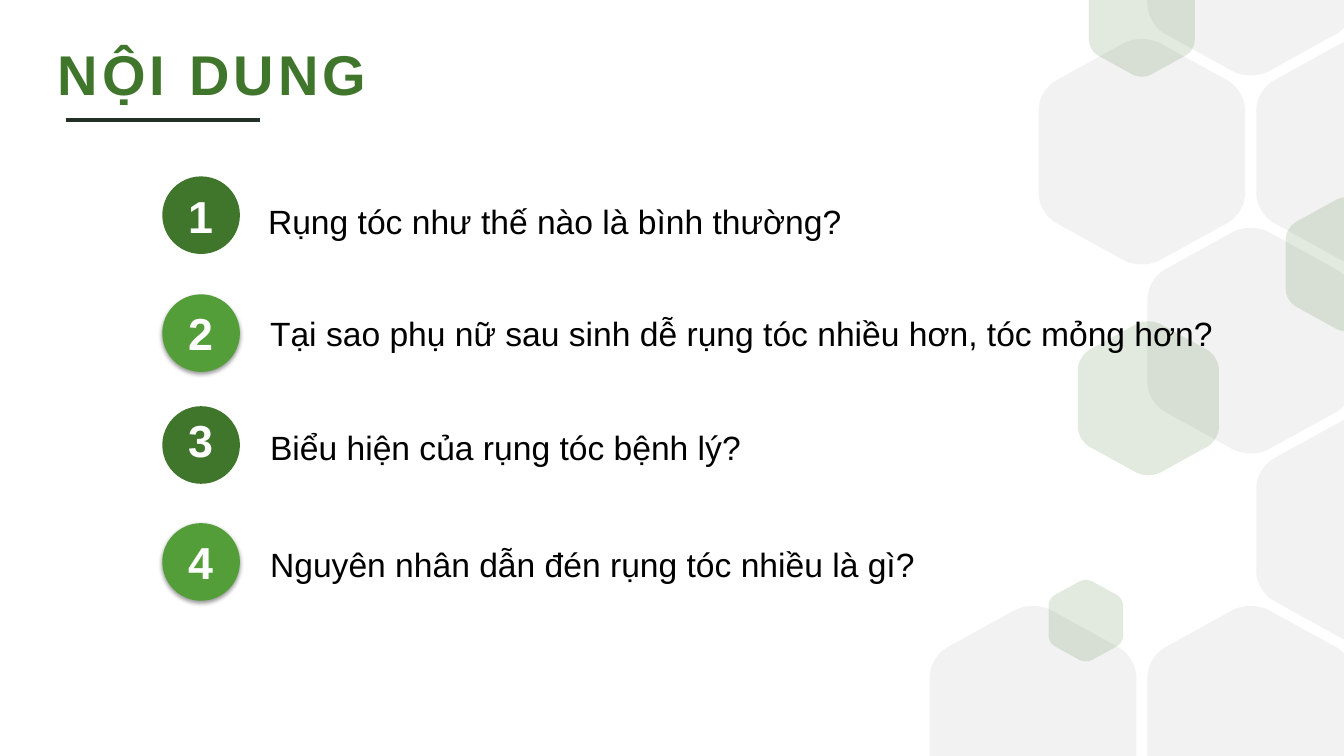
from lxml.etree import SubElement
from pptx import Presentation
from pptx.dml.color import RGBColor
from pptx.enum.shapes import MSO_CONNECTOR, MSO_SHAPE
from pptx.enum.text import MSO_AUTO_SIZE
from pptx.oxml.ns import qn
from pptx.util import Inches, Pt
from pptx.enum.text import MSO_ANCHOR, PP_ALIGN

DARK_GREEN = RGBColor(0x3F, 0x76, 0x2B)
GREEN = RGBColor(0x54, 0x9E, 0x39)
INK = RGBColor(0x22, 0x30, 0x28)
PALE_GREY = RGBColor(0xF2, 0xF2, 0xF2)
WHITE = RGBColor(0xFF, 0xFF, 0xFF)
BLACK = RGBColor(0, 0, 0)

SLIDE_W, SLIDE_H = 13.33, 7.5
HEADING = "NỘI DUNG"
TOPICS = [
    {"topic": "Rụng tóc như thế nào là bình thường?",
     "badge_top": 1.75, "number_top": 1.82, "left": 2.56, "top": 1.94},
    {"topic": "Tại sao phụ nữ sau sinh dễ rụng tóc nhiều hơn, tóc mỏng hơn?",
     "badge_top": 2.92, "number_top": 2.98, "top": 3.06, "width": 9.78},
    {"topic": "Biểu hiện của rụng tóc bệnh lý?",
     "badge_top": 4.03, "number_top": 4.05, "top": 4.19},
    {"topic": "Nguyên nhân dẫn đén rụng tóc nhiều là gì?",
     "badge_top": 5.19, "number_top": 5.26, "top": 5.23,
     "height": 0.57, "line_spacing": 1.3},
]
BADGE_LEFT, BADGE_SIZE = 1.61, 0.77
NUMBER_LEFT, NUMBER_W, NUMBER_H = 1.77, 0.55, 0.64

COMB_LEFT, COMB_TOP = 9.22, -1.5
COLUMN_STEP, ROW_STEP = 1.08, SLIDE_H / 4
CELL_W, CELL_H = 2.05, 2.26
COMB_CELLS = [(0, 4), (2, 4), (3, 1), (2, 0), (2, 2), (1, 1), (3, 3)]
GREEN_CELLS = [(12.75, 1.95, 1.22), (10.4, 5.75, 0.74),
               (10.8, -0.39, 1.05), (10.69, 3.18, 1.4)]

SIDE_CORNER = [(1, 0.32), (1, 0.27), (0.97, 0.22), (0.92, 0.19)]
TIP_CORNER = [(0.58, 0.02), (0.53, 0), (0.47, 0), (0.42, 0.02)]
UPPER_HALF = SIDE_CORNER + TIP_CORNER + [(1 - x, y) for x, y in reversed(SIDE_CORNER)]
LOWER_HALF = [(1 - x, 1 - y) for x, y in UPPER_HALF]


def hexagon_outline(top, height):
    if top < 0:
        edge = -top / height
        return [(0, edge), *LOWER_HALF, (1, edge)]
    if top + height > SLIDE_H:
        edge = (SLIDE_H - top) / height
        return [(1, edge), *UPPER_HALF, (0, edge)]
    return [LOWER_HALF[-1], *UPPER_HALF, *LOWER_HALF]


def round_corners(cell):
    lines = list(cell._element.iter(qn("a:lnTo")))
    for first in range(0, len(lines) - 3, 4):
        bend, *rest = lines[first + 1:first + 4]
        bend.tag = qn("a:cubicBezTo")
        for line in rest:
            bend.append(line[0])
            line.getparent().remove(line)


def add_hexagon(slide, left, top, width, color, opacity=None):
    height = width * CELL_H / CELL_W
    points = [(Inches(left + x * width), Inches(top + y * height))
              for x, y in hexagon_outline(top, height)]
    builder = slide.shapes.build_freeform(*points[0])
    builder.add_line_segments(points[1:], close=True)
    cell = builder.convert_to_shape()
    round_corners(cell)
    paint(cell, color)
    if opacity:
        tint = cell.fill._xPr.find(qn("a:solidFill"))[0]
        SubElement(tint, qn("a:alpha"), val=str(opacity * 1000))


def paint(shape, color):
    shape.shadow.inherit = False
    shape.fill.solid()
    shape.fill.fore_color.rgb = color
    shape.line.fill.background()


def add_soft_shadow(shape):
    effects = shape._element.spPr.find(qn("a:effectLst"))
    shadow = SubElement(effects, qn("a:outerShdw"), blurRad="40000",
                        dist="20000", dir="5400000", rotWithShape="0")
    black = SubElement(shadow, qn("a:srgbClr"), val="000000")
    SubElement(black, qn("a:alpha"), val="38000")


def write(shape, text, size, color, bold=False, line_spacing=None, tracking=None):
    frame = shape.text_frame
    frame.word_wrap = True
    frame.auto_size = MSO_AUTO_SIZE.NONE
    frame.vertical_anchor = MSO_ANCHOR.TOP
    paragraph = frame.paragraphs[0]
    paragraph.alignment = PP_ALIGN.LEFT
    paragraph.line_spacing = line_spacing or 1.0
    run = paragraph.add_run()
    run.text = text
    run.font.name = "Arial"
    run.font.size = Pt(size)
    run.font.bold = bold
    run.font.color.rgb = color
    if tracking:
        run.font._element.set("spc", str(tracking * 100))


def add_text(slide, text, left, top, width, height, **style):
    box = slide.shapes.add_textbox(Inches(left), Inches(top), Inches(width), Inches(height))
    write(box, text, **style)


def add_topic(slide, number, topic, badge_top, number_top, top,
              left=2.58, width=8.79, height=0.5, line_spacing=None):
    raised = number % 2 == 0
    badge = slide.shapes.add_shape(MSO_SHAPE.OVAL, Inches(BADGE_LEFT), Inches(badge_top),
                                   Inches(BADGE_SIZE), Inches(BADGE_SIZE))
    paint(badge, GREEN if raised else DARK_GREEN)
    if raised:
        add_soft_shadow(badge)
    add_text(slide, str(number), NUMBER_LEFT, number_top, NUMBER_W, NUMBER_H,
             size=32, color=WHITE, bold=True)
    add_text(slide, topic, left, top, width, height,
             size=24, color=BLACK, line_spacing=line_spacing)


def main():
    deck = Presentation()
    deck.slide_width, deck.slide_height = Inches(SLIDE_W), Inches(SLIDE_H)
    slide = deck.slides.add_slide(deck.slide_layouts[5])

    for column, row in COMB_CELLS:
        add_hexagon(slide, COMB_LEFT + column * COLUMN_STEP,
                    COMB_TOP + row * ROW_STEP, CELL_W, PALE_GREY)
    for left, top, width in GREEN_CELLS:
        add_hexagon(slide, left, top, width, DARK_GREEN, opacity=15)

    heading = slide.shapes.title
    heading.left, heading.top = Inches(0.47), Inches(0.34)
    heading.width, heading.height = Inches(8.63), Inches(0.77)
    write(heading, HEADING, 40, DARK_GREEN, bold=True, tracking=3)

    underline = slide.shapes.add_connector(MSO_CONNECTOR.STRAIGHT, Inches(0.65),
                                           Inches(1.19), Inches(2.58), Inches(1.19))
    underline.line.color.rgb = INK
    underline.line.width = Pt(3)
    SubElement(underline._element.spPr, qn("a:effectLst"))

    for number, entry in enumerate(TOPICS, 1):
        add_topic(slide, number, **entry)

    deck.save("out.pptx")


if __name__ == "__main__":
    main()
